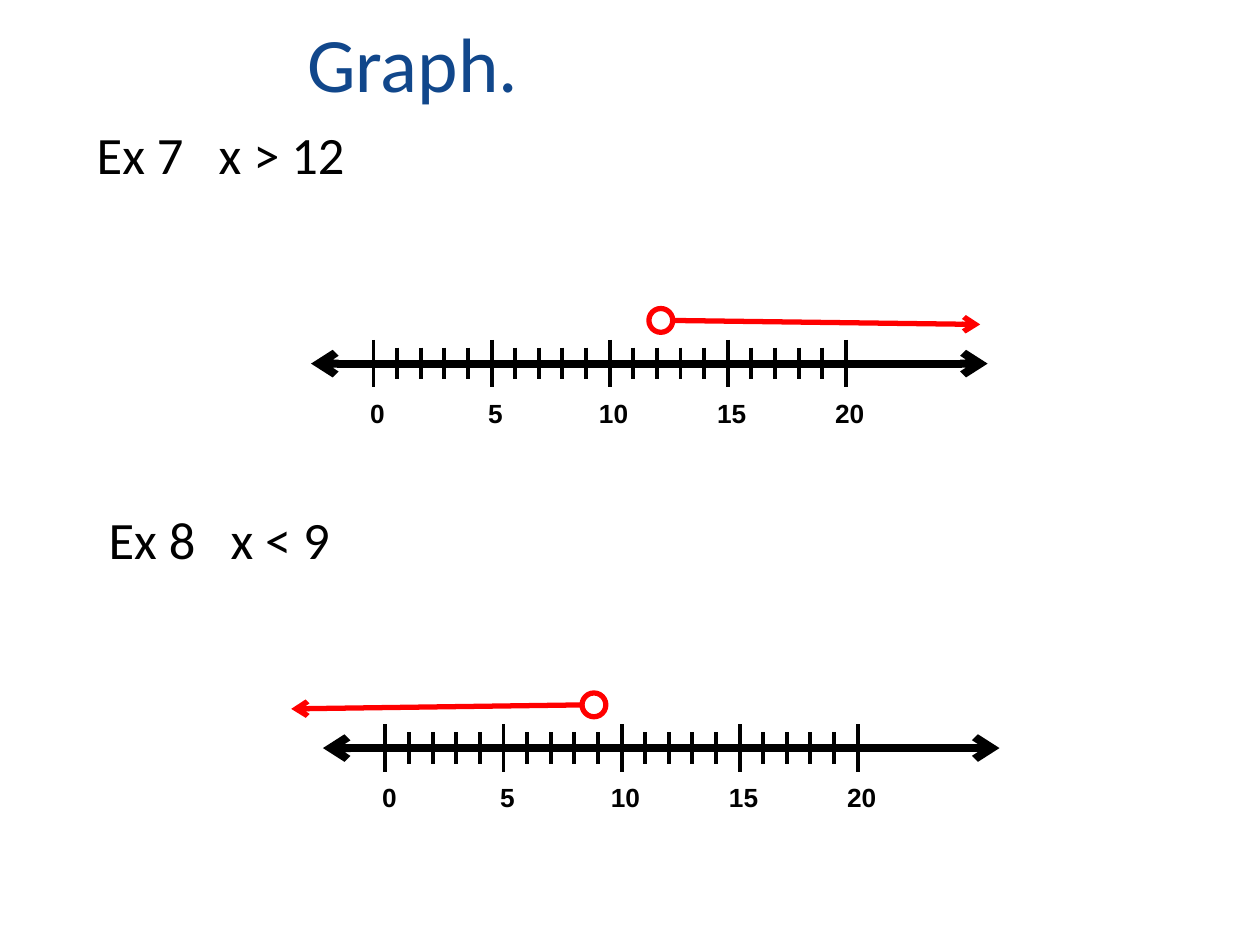
from dataclasses import dataclass

from lxml.etree import SubElement
from pptx import Presentation
from pptx.dml.color import RGBColor
from pptx.enum.shapes import MSO_CONNECTOR as Conn, MSO_SHAPE as Shape
from pptx.enum.text import MSO_ANCHOR as Anchor, PP_ALIGN as Align
from pptx.oxml.ns import qn
from pptx.util import Cm, Pt

COLORS = {"title": "11478B", "ink": "000000", "ray": "FF0000"}
TITLE = {"name": "Calibri", "size": Pt(44)}
BODY = {"name": "Calibri", "size": Pt(30)}
LABEL = {"name": "Arial", "size": Pt(15), "bold": True}

ZERO_X, AXIS_Y, STEP = 7.53, 7.33, 0.476
LAST, MAJOR = 20, 5
RING = 0.48
RING_Y = 6.46
RING_SHIFT = 0.08


@dataclass
class Example:
    name: str
    inequality: str
    bound: int
    direction: int
    ray_end: float
    dx: float
    dy: float


EXAMPLES = [
    Example("Ex 7", "x > 12", 12, 1, 19.76, 0, 0),
    Example("Ex 8", "x < 9", 9, -1, 5.63, 0.24, 7.75),
]


def rgb(key: str) -> RGBColor:
    return RGBColor.from_string(COLORS[key])


def add_text(s, text: str, box: tuple, font: dict, color: str = "ink",
             align=Align.LEFT, anchor=Anchor.TOP, tabs=(), tab_align: str = "l"):
    tf = s.shapes.add_textbox(*map(Cm, box)).text_frame
    tf.word_wrap = True
    tf.vertical_anchor = anchor
    p = tf.paragraphs[0]
    p.alignment = align
    r = p.add_run()
    r.text = text
    for key, value in font.items():
        setattr(r.font, key, value)
    r.font.color.rgb = rgb(color)
    if tabs:
        tab_list = SubElement(p._p.get_or_add_pPr(), qn("a:tabLst"))
        for pos in tabs:
            SubElement(tab_list, qn("a:tab"), pos=str(Cm(pos)), algn=tab_align)


def add_line(s, x1: float, y1: float, x2: float, y2: float, width: float,
             color: str = "ink", ends: tuple = ()):
    line = s.shapes.add_connector(Conn.STRAIGHT, Cm(x1), Cm(y1), Cm(x2), Cm(y2))
    line.line.width = Pt(width)
    line.line.color.rgb = rgb(color)
    for end in ends:
        SubElement(line.line._get_or_add_ln(), qn(f"a:{end}"), type="arrow")
    SubElement(line._element.spPr, qn("a:effectLst"))


def add_number_line(s, dx: float, dy: float):
    y = AXIS_Y + dy
    add_line(s, 6.27 + dx, y, 19.91 + dx, y, 4.5, ends=("headEnd", "tailEnd"))
    for n in range(LAST + 1):
        x = ZERO_X + n * STEP + dx
        half = 0.32 if n % MAJOR else 0.48
        add_line(s, x, y - half, x, y + half, 2.25)
    numbers = range(0, LAST + 1, MAJOR)
    add_text(s, "".join(f"\t{n}" for n in numbers),
             (7.06 + dx, 7.88 + dy, 11.58, 1.02), LABEL,
             tabs=[0.3 + n * STEP for n in numbers], tab_align="ctr")


def add_solution(s, ex: Example):
    x = ZERO_X + ex.bound * STEP + RING_SHIFT * ex.direction + ex.dx
    y = RING_Y + ex.dy
    ring = s.shapes.add_shape(Shape.OVAL, Cm(x - RING / 2), Cm(y - RING / 2),
                              Cm(RING), Cm(RING))
    ring.shadow.inherit = False
    ring.fill.background()
    ring.line.width = Pt(3)
    ring.line.color.rgb = rgb("ray")
    add_line(s, x + ex.direction * RING / 2, y, ex.ray_end + ex.dx, y + 0.08,
             3, "ray", ("tailEnd",))


def main():
    prs = Presentation()
    prs.slide_width, prs.slide_height = Cm(25.4), Cm(19.05)
    s = prs.slides.add_slide(prs.slide_layouts[6])
    add_text(s, "Graph.", (1.02, 0.61, 14.6, 1.27), TITLE, "title",
             Align.CENTER, Anchor.MIDDLE)
    for ex in EXAMPLES:
        add_text(s, f"{ex.name}\t{ex.inequality}",
                 (1.7 + ex.dx, 2.34 + ex.dy, 14.76, 7.77), BODY, tabs=[2.46])
        add_number_line(s, ex.dx, ex.dy)
        add_solution(s, ex)
    prs.save("out.pptx")


if __name__ == "__main__":
    main()
